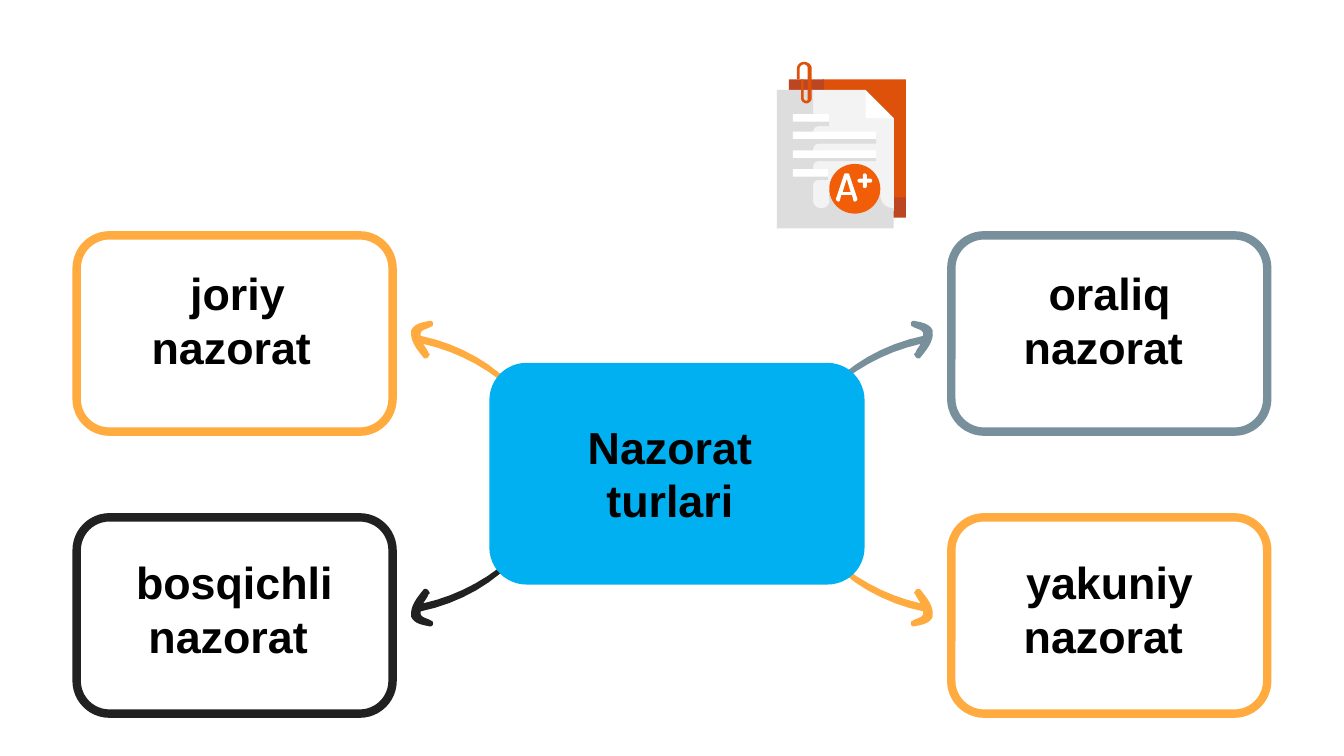
import pptx
import pptx.dml.color
import pptx.enum.shapes
import pptx.enum.text
import pptx.util

Cm = pptx.util.Cm
SHAPES = pptx.enum.shapes.MSO_SHAPE

ORANGE, GREY, BLACK, WHITE = "FFAB40", "78909C", "212121", "FFFFFF"
RUST = "DD510B"
GRID = 0.0254  # cm in one unit of the drawing grid
CURVE_STEPS = 8

# Outlines in grid units: a pair is a line end, six numbers are a Bezier curve.
ARROW = [
    (611, 295), (612, 296, 613, 296, 613, 296), (633, 276, 658, 262, 685, 256),
    (684, 258, 682, 260, 681, 263), (680, 263, 680, 264, 681, 265),
    (681, 266, 684, 268, 685, 266), (689, 261, 695, 254, 694, 247),
    (694, 246), (692, 241, 686, 240, 681, 239), (679, 238, 677, 240, 678, 242),
    (678, 242, 678, 243, 679, 243), (682, 245, 686, 245, 687, 248),
    (687, 250), (658, 256, 631, 271, 612, 294), (611, 294, 611, 295, 611, 295),
]
COVER_SHADE = [(587, 59), (587, 162), (674, 162), (674, 147), (613, 147), (613, 59)]
PAPER = [(604, 67), (604, 157), (665, 157), (665, 88), (652, 81), (644, 67)]
PAPER_SHADE = [
    (578, 67), (578, 170), (665, 170), (665, 155),
    (659, 155, 655, 151, 655, 145), (655, 144),
    (654, 135, 646, 127, 636, 127), (625, 127, 617, 135, 617, 145),
    (617, 148), (618, 152, 615, 155, 611, 155), (608, 155, 605, 153, 605, 149),
    (605, 138), (605, 136, 607, 134, 609, 134), (616, 134), (616, 129), (609, 129),
    (607, 129, 605, 127, 605, 125), (605, 124), (605, 122, 607, 120, 609, 120),
    (652, 120), (652, 115), (609, 115), (607, 115, 605, 113, 605, 111),
    (605, 109, 607, 107, 609, 107), (652, 107), (652, 101), (609, 101),
    (607, 101, 605, 100, 605, 98), (605, 96, 607, 94, 609, 94),
    (617, 94), (617, 88), (609, 88), (607, 88, 605, 87, 605, 85), (605, 67),
]
FOLD = [(644, 67), (644, 88), (665, 88)]
GRADE_HOLE = [(630, 133), (633, 143), (627, 143)]
GRADE_LETTER = [
    (630, 129), (629, 129, 628, 129, 628, 130), (622, 148),
    (622, 149, 623, 150, 624, 150), (625, 150, 625, 149, 625, 149),
    (626, 145), (634, 145), (635, 149), (635, 149, 635, 150, 636, 150),
    (637, 150, 638, 149, 638, 148), (632, 130), (632, 129, 631, 129, 630, 129),
]
CLIP = [
    (598, 46), (596, 46, 593, 48, 593, 51), (593, 59), (595, 59), (595, 51),
    (595, 49, 597, 48, 598, 48), (600, 48, 601, 49, 601, 51), (601, 73),
    (601, 74, 601, 75, 600, 75), (599, 75, 598, 74, 598, 73), (598, 59),
    (596, 59), (596, 73), (596, 75, 598, 77, 600, 77),
    (602, 77, 604, 75, 604, 73), (604, 51), (604, 48, 601, 46, 598, 46),
]


def colour(code):
    return pptx.dml.color.RGBColor.from_string(code)


def write_text(frame, text, size=24, bold=True, font="Arial", code="000000"):
    frame.word_wrap = True
    frame.vertical_anchor = pptx.enum.text.MSO_ANCHOR.MIDDLE
    frame.margin_left = frame.margin_right = Cm(0.25)
    frame.margin_top = frame.margin_bottom = Cm(0.25)
    paragraph = frame.paragraphs[0]
    paragraph.alignment = pptx.enum.text.PP_ALIGN.CENTER
    run = paragraph.add_run()
    run.text = text
    run.font.size = pptx.util.Pt(size)
    run.font.bold = bold
    run.font.name = font
    run.font.color.rgb = colour(code)


def flatten(outline):
    """Turn an outline of lines and Bezier curves into plain points."""
    points = [outline[0]]
    for segment in outline[1:]:
        if len(segment) == 2:
            points.append(segment)
            continue
        corners = [points[-1], segment[:2], segment[2:4], segment[4:]]
        for step in range(1, CURVE_STEPS + 1):
            t = step / CURVE_STEPS
            weights = ((1 - t) ** 3, 3 * t * (1 - t) ** 2, 3 * t * t * (1 - t), t ** 3)
            points.append(tuple(
                sum(weight * corner[axis] for weight, corner in zip(weights, corners))
                for axis in (0, 1)))
    return points


class Deck:
    """Holds the style and the slide being drawn."""

    def __init__(self, slide, line_width=4.5, rounding=0.167):
        self.slide = slide
        self.line_width = line_width
        self.rounding = rounding

    def paint(self, shape, fill, line=None):
        shape.shadow.inherit = False
        shape.fill.solid()
        shape.fill.fore_color.rgb = colour(fill)
        if line:
            shape.line.color.rgb = colour(line)
            shape.line.width = pptx.util.Pt(self.line_width)
        else:
            shape.line.fill.background()

    def preset(self, kind, left, top, width, height, fill, line=None):
        shape = self.slide.shapes.add_shape(
            kind, Cm(left), Cm(top), Cm(width), Cm(height))
        self.paint(shape, fill, line)
        return shape

    def box(self, left, top, width, height, fill, line=None):
        shape = self.preset(SHAPES.ROUNDED_RECTANGLE, left, top, width, height, fill, line)
        shape.adjustments[0] = self.rounding

    def label(self, left, top, width, height, text):
        shape = self.slide.shapes.add_textbox(Cm(left), Cm(top), Cm(width), Cm(height))
        write_text(shape.text_frame, text)

    def grid_preset(self, kind, left, top, width, height, fill):
        return self.preset(kind, left * GRID, top * GRID, width * GRID, height * GRID, fill)

    def outline(self, fill, *outlines):
        contours = [[(Cm(x * GRID), Cm(y * GRID)) for x, y in flatten(outline)]
                    for outline in outlines]
        builder = self.slide.shapes.build_freeform(*contours[0][0], scale=1.0)
        builder.add_line_segments(contours[0][1:], close=True)
        for contour in contours[1:]:
            builder.move_to(*contour[0])
            builder.add_line_segments(contour[1:], close=True)
        self.paint(builder.convert_to_shape(), fill)

    def arrow(self, fill, mirror_x, mirror_y):
        points = [(1000 - x if mirror_x else x, 705 - y if mirror_y else y)
                  for x, y in flatten(ARROW)]
        self.outline(fill, points)


def draw_paper_icon(deck):
    # Cover and sheet
    deck.grid_preset(SHAPES.RECTANGLE, 612, 59, 62, 91, RUST)
    deck.outline("BC4622", COVER_SHADE)
    deck.outline("F3F3F3", PAPER)
    deck.outline("DDDDDD", PAPER_SHADE)
    deck.outline(WHITE, FOLD)
    # Grade badge
    deck.grid_preset(SHAPES.OVAL, 617, 122, 38, 37, "F25D07")
    deck.outline(WHITE, GRADE_HOLE, GRADE_LETTER)
    for bar in ((638, 133, 11, 3), (642, 129, 3, 11)):
        deck.grid_preset(SHAPES.ROUNDED_RECTANGLE, *bar, WHITE).adjustments[0] = 0.5
    # Written lines and clip
    for top, width in ((85, 27), (98, 62), (112, 62), (126, 26)):
        deck.grid_preset(SHAPES.RECTANGLE, 590, top, width, 5.5, WHITE)
    deck.outline(RUST, CLIP)


def main():
    presentation = pptx.Presentation()
    presentation.slide_width = Cm(25.4)
    presentation.slide_height = Cm(14.29)
    deck = Deck(presentation.slides.add_slide(presentation.slide_layouts[6]))

    # Kinds of control: text, colour, right side, lower row, label left
    kinds = [
        ("joriy nazorat ", ORANGE, False, False, 1.91),
        ("bosqichli nazorat ", BLACK, False, True, 1.85),
        ("oraliq nazorat ", GREY, True, False, 18.39),
        ("yakuniy nazorat ", ORANGE, True, True, 18.39),
    ]
    for text, code, right, lower, label_left in kinds:
        deck.arrow(code, not right, lower)
        deck.box(17.98 if right else 1.45, 9.78 if lower else 4.45, 5.97, 3.71, WHITE, code)
        deck.label(label_left, 11.05 if lower else 5.59, 5.16, 0.91, text)

    # Central topic
    deck.box(9.25, 6.86, 7.09, 4.19, "00B0F0")
    deck.label(10.59, 7.7, 4.14, 2.49, "Nazorat turlari")

    draw_paper_icon(deck)
    presentation.save("out.pptx")


if __name__ == "__main__":
    main()
